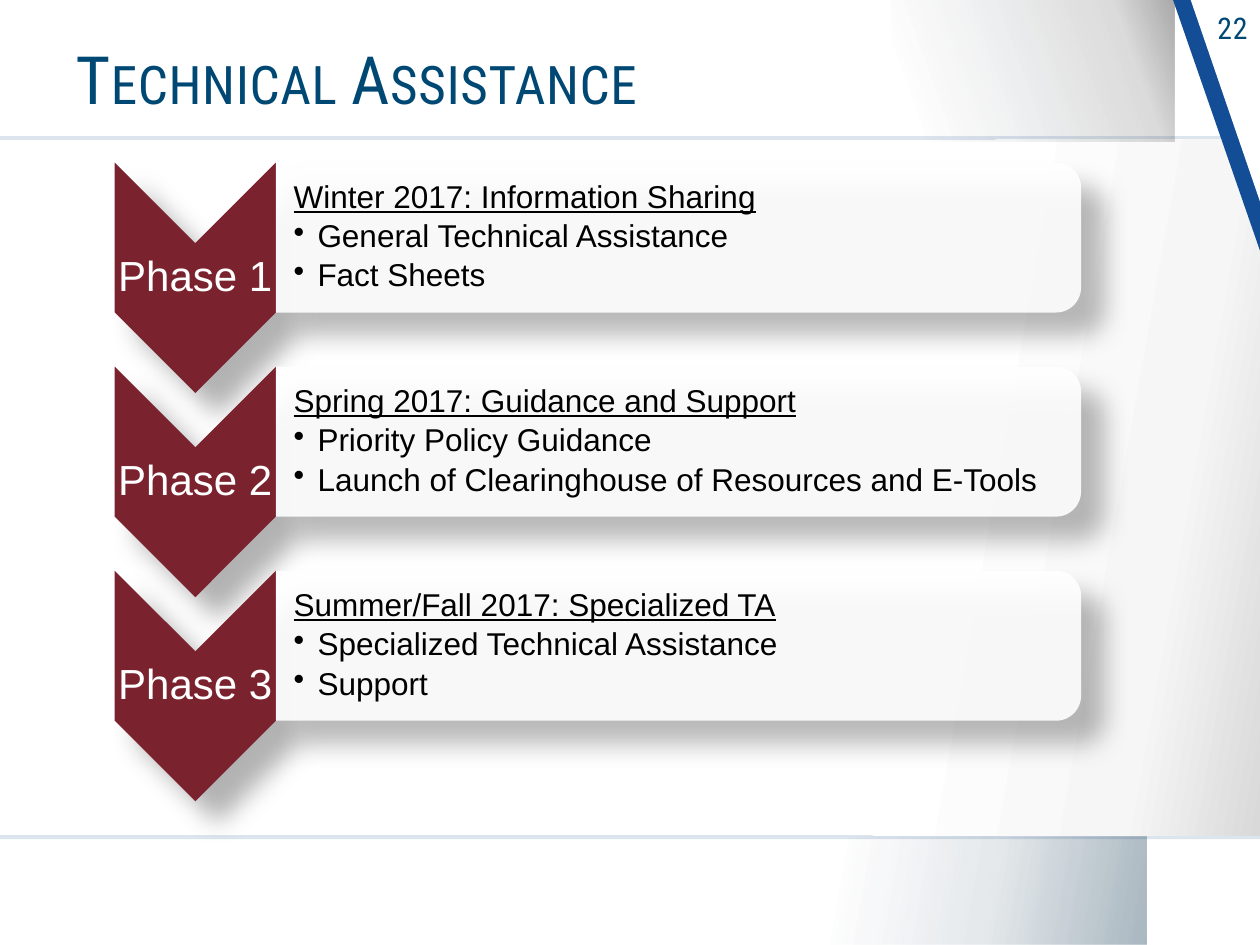
from lxml.etree import SubElement as Sub
from pptx import Presentation
from pptx.dml.color import RGBColor as RGB
from pptx.enum.shapes import MSO_SHAPE as Shape
from pptx.enum.text import MSO_ANCHOR as Anchor, MSO_AUTO_SIZE as Fit, PP_ALIGN as Align
from pptx.oxml.ns import qn
from pptx.util import Inches, Pt

INK = {"white": "FFFFFF", "black": "000000", "pale": "F6F6F6", "grey": "D9D9D9",
       "navy": "002C47", "title": "004874", "rule": "275A99", "blue": "124D95",
       "red": "7A232E"}
PHASES = [
    ("Phase 1", "Winter 2017: Information Sharing",
     ["General Technical Assistance", "Fact Sheets"]),
    ("Phase 2", "Spring 2017: Guidance and Support",
     ["Priority Policy Guidance", "Launch of Clearinghouse of Resources and E-Tools"]),
    ("Phase 3", "Summer/Fall 2017: Specialized TA",
     ["Specialized Technical Assistance", "Support"]),
]


def tint(node, ink, alpha=100):
    """Add a colour with opacity in percent to an XML node."""
    color = Sub(node, qn("a:srgbClr"), val=INK[ink])
    if alpha < 100:
        Sub(color, qn("a:alpha"), val=str(alpha * 1000))


def shape(slide, kind, box, ink="white", alpha=100):
    """Draw a plain filled shape in a box of inches."""
    item = slide.shapes.add_shape(kind, *map(Inches, box))
    item.shadow.inherit = False
    item.line.fill.background()
    item.fill.solid()
    item.fill.fore_color.rgb = RGB.from_string(INK[ink])
    if alpha < 100:
        color = item._element.spPr.find(".//" + qn("a:srgbClr"))
        Sub(color, qn("a:alpha"), val=str(alpha * 1000))
    return item


def blend(item, stops, angle):
    """Fill a shape with a linear gradient of (place, ink, alpha) stops."""
    props = item._element.spPr
    old = props.find(qn("a:solidFill"))
    grad = Sub(props, qn("a:gradFill"), rotWithShape="1")
    props.replace(old, grad)
    marks = Sub(grad, qn("a:gsLst"))
    for place, ink, alpha in stops:
        tint(Sub(marks, qn("a:gs"), pos=str(place * 1000)), ink, alpha)
    Sub(grad, qn("a:lin"), ang=str(angle * 60000), scaled="0")


def shade(item):
    """Give a shape a soft shadow down to the right."""
    glow = item._element.spPr.find(qn("a:effectLst"))
    node = Sub(glow, qn("a:outerShdw"), blurRad=str(Pt(15)), dist=str(Pt(18)),
               dir=str(45 * 60000), algn="tl", rotWithShape="0")
    tint(node, "black", 30)


def turned(slide, kind, box, ink, alpha=100):
    """Draw a shadowed shape turned by 90 degrees so that it covers the box."""
    x, y, w, h = box
    item = shape(slide, kind, (x + (w - h) / 2, y + (h - w) / 2, h, w), ink, alpha)
    item.rotation = 90
    shade(item)


def write(par, text, ink, **form):
    """Add a run with the given font values to a paragraph."""
    run = par.add_run()
    run.text = text
    run.font.color.rgb = RGB.from_string(INK[ink])
    for key, value in form.items():
        setattr(run.font, key, value)
    return run._r.get_or_add_rPr()


def frame(slide, box, pads):
    """Add a wrapped, middle-anchored text box and return its frame."""
    body = slide.shapes.add_textbox(*map(Inches, box)).text_frame
    body.word_wrap = True
    body.vertical_anchor = Anchor.MIDDLE
    for side, pad in zip(("left", "top", "right", "bottom"), pads):
        setattr(body, "margin_" + side, Inches(pad))
    return body


def backdrop(slide):
    """Draw the panel, the shaded bands and the corner stripe."""
    rect = Shape.RECTANGLE
    shape(slide, rect, (0, 1.08, 10, 5.58), "rule", 16)
    bands = [
        ((0, 1.11, 10, 5.52), 10, [(0, "white", 100), (72, "white", 100),
                                   (90, "pale", 100), (100, "grey", 100)]),
        ((6.43, 6.64, 2.67, 0.86), 10, [(10, "navy", 0), (56, "navy", 11),
                                        (100, "navy", 34)]),
        ((7.08, 0, 2.24, 1.12), 340, [(10, "navy", 0), (81, "black", 14),
                                      (100, "black", 34)]),
    ]
    for box, angle, stops in bands:
        blend(shape(slide, rect, box), stops, angle)
    for wide, high, ink in ((0.69, 1.99, "blue"), (0.55, 1.6, "white")):
        item = shape(slide, Shape.ISOSCELES_TRIANGLE, (10 - wide, 0, wide, high), ink)
        item.adjustments[0] = 1
        item._element.spPr.find(qn("a:xfrm")).set("flipV", "1")


def heading(slide, box):
    """Place the title placeholder above the backdrop."""
    title = slide.shapes.title
    slide.shapes._spTree.append(title._element)
    for key, value in zip(("left", "top", "width", "height"), box):
        setattr(title, key, Inches(value))
    body = title.text_frame
    body.auto_size = Fit.NONE
    body.vertical_anchor = Anchor.MIDDLE
    par = body.paragraphs[0]
    par.alignment, par.line_spacing = Align.LEFT, 0.85
    props = write(par, "Technical Assistance", "title", size=Pt(38), name="Roboto Condensed")
    props.set("cap", "small")
    props.set("spc", "40")


def number(slide, box):
    """Write the page number in the corner."""
    par = frame(slide, box, (0.1, 0.05, 0.1, 0.05)).paragraphs[0]
    par.alignment = Align.RIGHT
    write(par, "22", "title", size=Pt(17), name="Roboto Condensed").set("spc", "40")


def phase(slide, box, label, head, points):
    """Draw one phase: a chevron with its label and a card with its list."""
    x, y, w, h = box
    tag = 1.28
    turned(slide, Shape.CHEVRON, (x, y, tag, 1.83), "red")
    par = frame(slide, (x, y + tag / 2, tag, 0.55), [0.02] * 4).paragraphs[0]
    par.alignment, par.line_spacing = Align.CENTER, 0.9
    write(par, label, "white", size=Pt(24), name="Arial")

    left, wide = x + tag, w - tag
    turned(slide, Shape.ROUND_2_SAME_RECTANGLE, (left, y, wide, h), "white", 90)
    body = frame(slide, (left, y + 0.06, wide - 0.06, h - 0.12), (0.14, 0.01, 0.01, 0.01))
    for i, text in enumerate([head, *points]):
        par = body.add_paragraph() if i else body.paragraphs[0]
        par.line_spacing, par.space_after = 0.9, Pt(3)
        props = par._p.get_or_add_pPr()
        props.set("marL", str(Inches(0.19)))
        props.set("indent", str(Inches(-0.19)))
        if i:
            Sub(props, qn("a:buChar"), char="•")
        else:
            Sub(props, qn("a:buNone"))
        write(par, text, "black", size=Pt(18), name="Arial", underline=not i)


def main():
    """Build the slide and save it."""
    deck = Presentation()
    deck.slide_width, deck.slide_height = Inches(10), Inches(7.5)
    slide = deck.slides.add_slide(deck.slide_layouts[5])
    backdrop(slide)
    number(slide, (9.2, 0.02, 0.8, 0.39))
    heading(slide, (0.5, 0.24, 7.56, 0.85))
    for i, row in enumerate(PHASES):
        phase(slide, (0.91, 1.29 + 1.62 * i, 7.67, 1.19), *row)
    deck.save("out.pptx")


if __name__ == "__main__":
    main()
